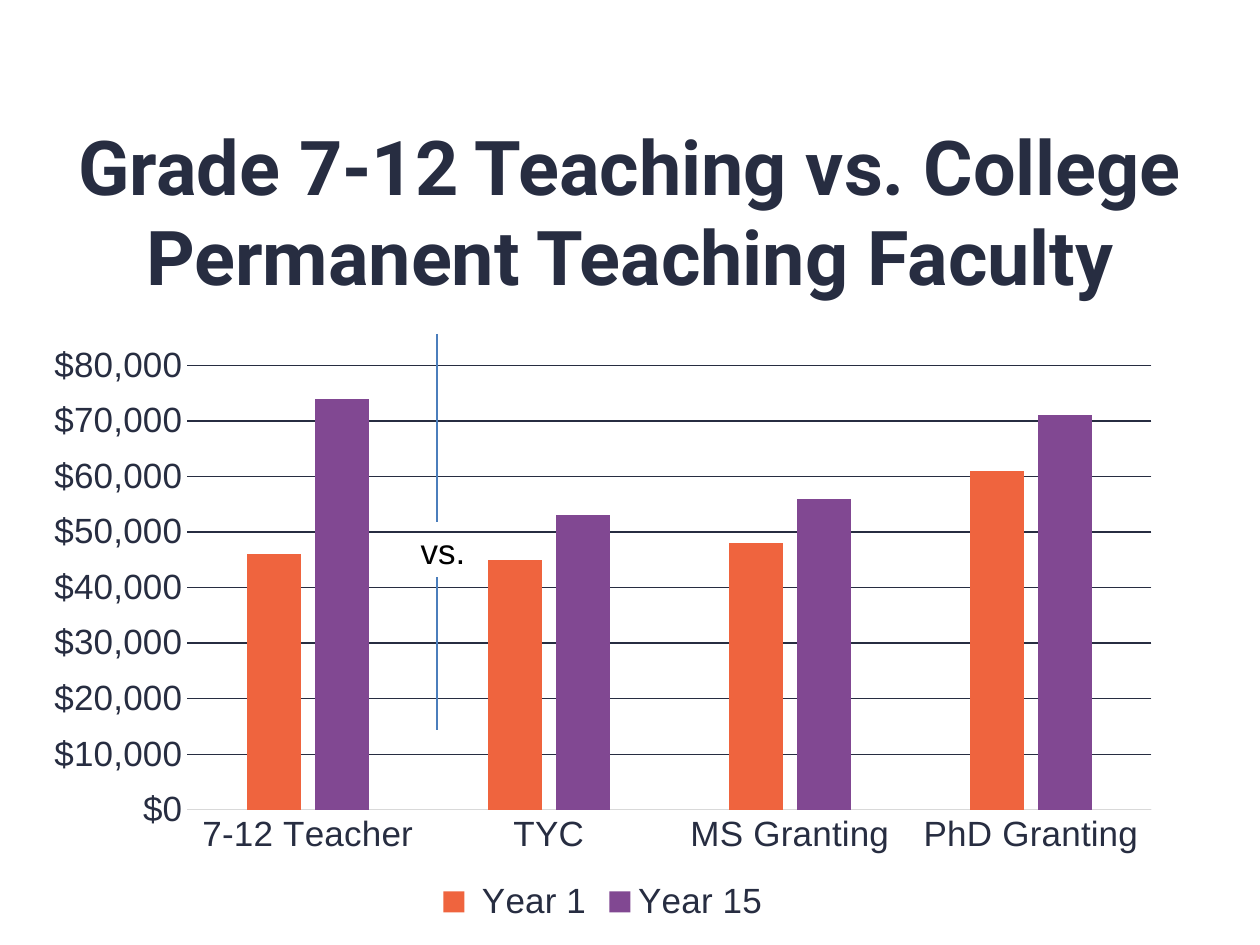
import pptx
import pptx.chart.data
import pptx.dml.color
import pptx.enum.chart
import pptx.enum.shapes
import pptx.enum.text
import pptx.util
from lxml import etree
from pptx.util import Inches, Pt

COLORS = {
    "ink": "272D41",
    "first": "EF643E",
    "later": "814892",
    "rule": "4B7EBC",
    "axis": "D9D9D9",
    "black": "000000",
}


def rgb(name):
    return pptx.dml.color.RGBColor.from_string(COLORS[name])


def style(font, size, color="ink", face="Arial"):
    font.name = face
    font.size = Pt(size)
    font.color.rgb = rgb(color)


deck = pptx.Presentation()
deck.slide_width, deck.slide_height = Inches(10), Inches(7.5)
slide = deck.slides.add_slide(deck.slide_layouts[5])
shapes = slide.shapes

# Title, pushed down by its top inset
title = shapes.title
title.left, title.top = Inches(0.5), Inches(0.66)
title.width, title.height = Inches(9), Inches(1.25)
frame = title.text_frame
frame.text = "Grade 7-12 Teaching vs. College Permanent Teaching Faculty"
frame.word_wrap = True
frame.auto_size = pptx.enum.text.MSO_AUTO_SIZE.NONE
frame.vertical_anchor = pptx.enum.text.MSO_ANCHOR.MIDDLE
frame.margin_top = Inches(0.82)
head = frame.paragraphs[0]
head.alignment = pptx.enum.text.PP_ALIGN.CENTER
style(head.font, 43.2, face="Roboto")
head.font.bold = True

# Salary chart
data = pptx.chart.data.CategoryChartData(number_format='"$"#,##0')
data.categories = ["7-12 Teacher", "TYC", "MS Granting", "PhD Granting"]
data.add_series(" Year 1", [46000, 45000, 48000, 61000])
data.add_series("Year 15", [74000, 53000, 56000, 71000])
chart = shapes.add_chart(
    pptx.enum.chart.XL_CHART_TYPE.COLUMN_CLUSTERED,
    Inches(0.25), Inches(2.65), Inches(9.07), Inches(4.72), data,
).chart
style(chart.font, 10, "black")
chart.has_title = False
chart.has_legend = True
chart.legend.position = pptx.enum.chart.XL_LEGEND_POSITION.BOTTOM
chart.legend.include_in_layout = False
style(chart.legend.font, 20)

plot = chart.plots[0]
plot.gap_width = 219
plot.overlap = -27
plot.vary_by_categories = False
for series, color in zip(plot.series, ("first", "later")):
    series.format.fill.solid()
    series.format.fill.fore_color.rgb = rgb(color)

groups, money = chart.category_axis, chart.value_axis
for axis in (groups, money):
    axis.major_tick_mark = pptx.enum.chart.XL_TICK_MARK.NONE
    axis.minor_tick_mark = pptx.enum.chart.XL_TICK_MARK.NONE
    style(axis.tick_labels.font, 20)
groups.format.line.color.rgb = rgb("axis")
groups.format.line.width = Pt(0.75)
money.minimum_scale, money.maximum_scale = 0, 80000
money.major_unit = 10000
money.format.line.fill.background()
money.tick_labels.number_format = '"$"#,##0'
money.tick_labels.number_format_is_linked = False
grid = money.major_gridlines.format.line
grid.color.rgb = rgb("ink")
grid.width = Pt(0.75)

# Divider between school and college, broken by its label
for top, end in ((2.65, 4.14), (4.58, 5.79)):
    rule = shapes.add_connector(
        pptx.enum.shapes.MSO_CONNECTOR.STRAIGHT,
        Inches(3.47), Inches(top), Inches(3.47), Inches(end),
    )
    rule.line.color.rgb = rgb("rule")
    rule.line.width = Pt(1.25)
    etree.SubElement(rule.element.spPr, pptx.oxml.ns.qn("a:effectLst"))

label = shapes.add_textbox(Inches(3.24), Inches(4.15), Inches(0.59), Inches(0.44))
label.text_frame.text = "vs."
label.text_frame.word_wrap = True
label.text_frame.auto_size = pptx.enum.text.MSO_AUTO_SIZE.SHAPE_TO_FIT_TEXT
style(label.text_frame.paragraphs[0].font, 20, "black")

deck.save("out.pptx")
